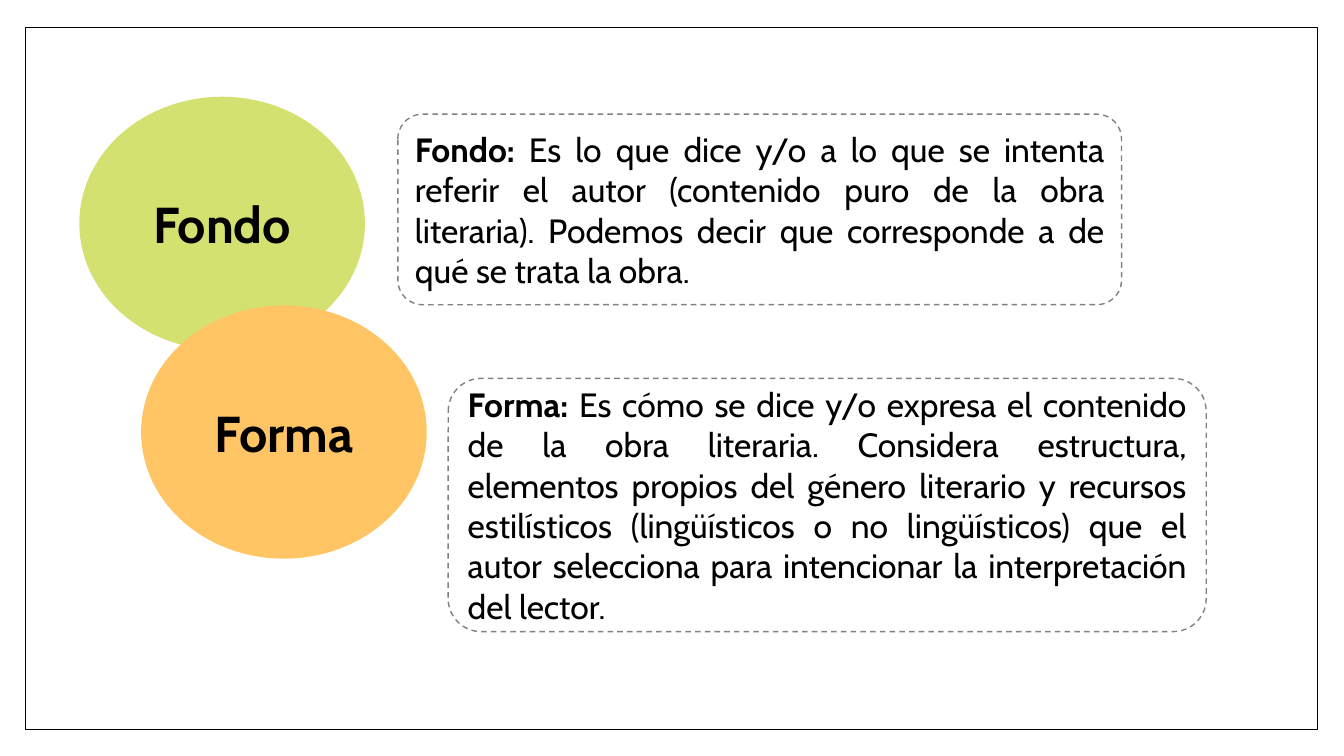
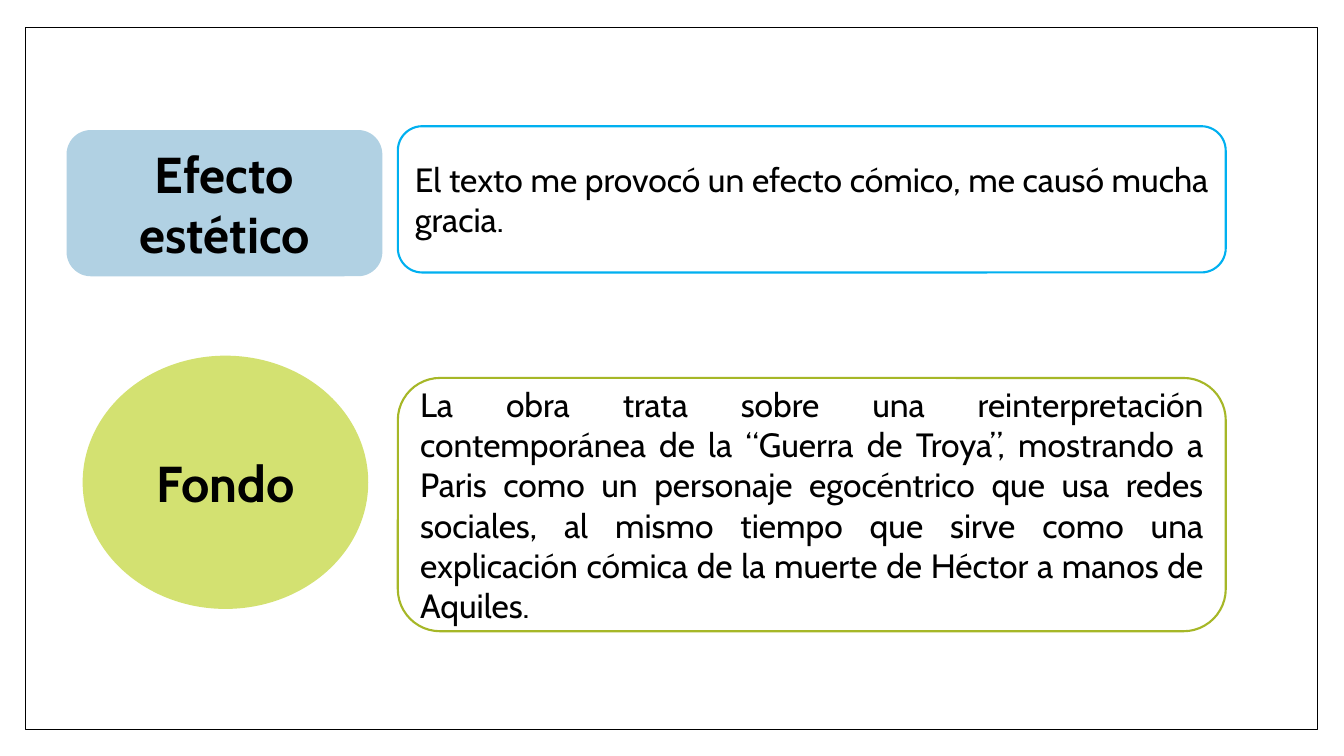
from dataclasses import dataclass

from pptx import Presentation
from pptx.dml.color import RGBColor
from pptx.enum.dml import MSO_LINE_DASH_STYLE as Dash
from pptx.enum.shapes import MSO_SHAPE as Preset
from pptx.enum.text import MSO_ANCHOR as Anchor, PP_ALIGN as Align
from pptx.util import Inches, Pt

WIDTH, HEIGHT = Inches(13.33), Inches(7.5)
COLUMN, ROW = WIDTH / 100, HEIGHT / 100
FONT = "Cabin"

BLACK = RGBColor(0x00, 0x00, 0x00)
WHITE = RGBColor(0xFF, 0xFF, 0xFF)
GRAY = RGBColor(0x81, 0x81, 0x83)
LIME = RGBColor(0xD3, 0xE1, 0x71)
OLIVE = RGBColor(0xA6, 0xB7, 0x27)
ORANGE = RGBColor(0xFF, 0xC5, 0x65)
PALE_BLUE = RGBColor(0xB1, 0xD1, 0xE3)
SKY_BLUE = RGBColor(0x00, 0xB0, 0xF0)


@dataclass
class Box:
    """An area measured in columns and rows of the 100 by 100 slide grid."""
    left: float
    top: float
    width: float
    height: float


FRAME = Box(1.9, 3.6, 96.15, 92.93)


def add_panel(page, preset, box, fill, line=None, weight=1, dash=None, corner=None):
    panel = page.shapes.add_shape(
        preset, round(box.left * COLUMN), round(box.top * ROW),
        round(box.width * COLUMN), round(box.height * ROW))
    panel.shadow.inherit = False
    panel.fill.solid()
    panel.fill.fore_color.rgb = fill
    if line is None:
        panel.line.fill.background()
    else:
        panel.line.color.rgb = line
        panel.line.width = Pt(weight)
        if dash:
            panel.line.dash_style = dash
    if corner:
        panel.adjustments[0] = corner
    return panel


def write(panel, text, size, align, lead="", bold=False):
    """Fill a panel with one paragraph that may open with a bold lead."""
    frame = panel.text_frame
    frame.word_wrap = True
    frame.vertical_anchor = Anchor.MIDDLE
    para = frame.paragraphs[0]
    para.alignment = align
    for words, heavy in ((lead, True), (text, bold)):
        if words:
            span = para.add_run()
            span.text = words
            span.font.name = FONT
            span.font.size = Pt(size)
            span.font.bold = heavy
            span.font.color.rgb = BLACK


def add_topic(page, box, label, color, text, card_size, drop,
              lead="", preset=Preset.OVAL, **card_style):
    """Place a label at the box's left and a card, lowered by drop, at its right."""
    card_width, card_height = card_size
    label_width = 23.5 if preset == Preset.ROUNDED_RECTANGLE else 21.25
    card_box = Box(box.left + box.width - card_width, box.top + drop,
                   card_width, card_height)
    card = add_panel(page, Preset.ROUNDED_RECTANGLE, card_box, WHITE, **card_style)
    write(card, text, 24, Align.JUSTIFY, lead=lead)
    label_box = Box(box.left, box.top, label_width, box.height)
    badge = add_panel(page, preset, label_box, color)
    write(badge, label, 36, Align.CENTER, bold=True)


def add_definitions(deck, layout):
    page = deck.slides.add_slide(layout)
    style = dict(line=GRAY, dash=Dash.DASH, corner=0.13)
    add_topic(
        page, Box(5.9, 12.8, 77.55, 33.5), "Fondo", LIME,
        "Es lo que dice y/o a lo que se intenta referir el autor (contenido puro "
        "de la obra literaria). Podemos decir que corresponde a de qué se trata la obra.",
        (53.85, 25.2), 2.3, lead="Fondo: ", **style)
    add_topic(
        page, Box(10.5, 40.4, 79.25, 33.5), "Forma", ORANGE,
        "Es cómo se dice y/o expresa el contenido de la obra literaria. Considera "
        "estructura, elementos propios del género literario y recursos estilísticos "
        "(lingüísticos o no lingüísticos) que el autor selecciona para intencionar "
        "la interpretación del lector.",
        (56.4, 33.5), 9.65, lead="Forma: ", **style)


def add_example(deck, layout):
    page = deck.slides.add_slide(layout)
    add_topic(
        page, Box(4.95, 17.2, 86.25, 19.35), "Efecto estético", PALE_BLUE,
        "El texto me provocó un efecto cómico, me causó mucha gracia.",
        (61.6, 19.35), -0.5, preset=Preset.ROUNDED_RECTANGLE,
        line=SKY_BLUE, weight=1.5)
    add_topic(
        page, Box(6.15, 47.05, 85.05, 33.5), "Fondo", LIME,
        "La obra trata sobre una reinterpretación contemporánea de la “Guerra de "
        "Troya”, mostrando a Paris como un personaje egocéntrico que usa redes "
        "sociales, al mismo tiempo que sirve como una explicación cómica de la "
        "muerte de Héctor a manos de Aquiles.",
        (61.6, 33.5), 2.95, line=OLIVE, weight=1.5)


def main():
    deck = Presentation()
    deck.slide_width, deck.slide_height = WIDTH, HEIGHT
    layout = deck.slide_layouts.get_by_name("Blank")
    add_definitions(deck, layout)
    add_example(deck, layout)
    # The border is moved to the layout, so every slide shows it behind its parts.
    border = add_panel(deck.slides[0], Preset.RECTANGLE, FRAME, WHITE, line=BLACK)
    layout.shapes.element.append(border.element)
    deck.save("out.pptx")


if __name__ == "__main__":
    main()
